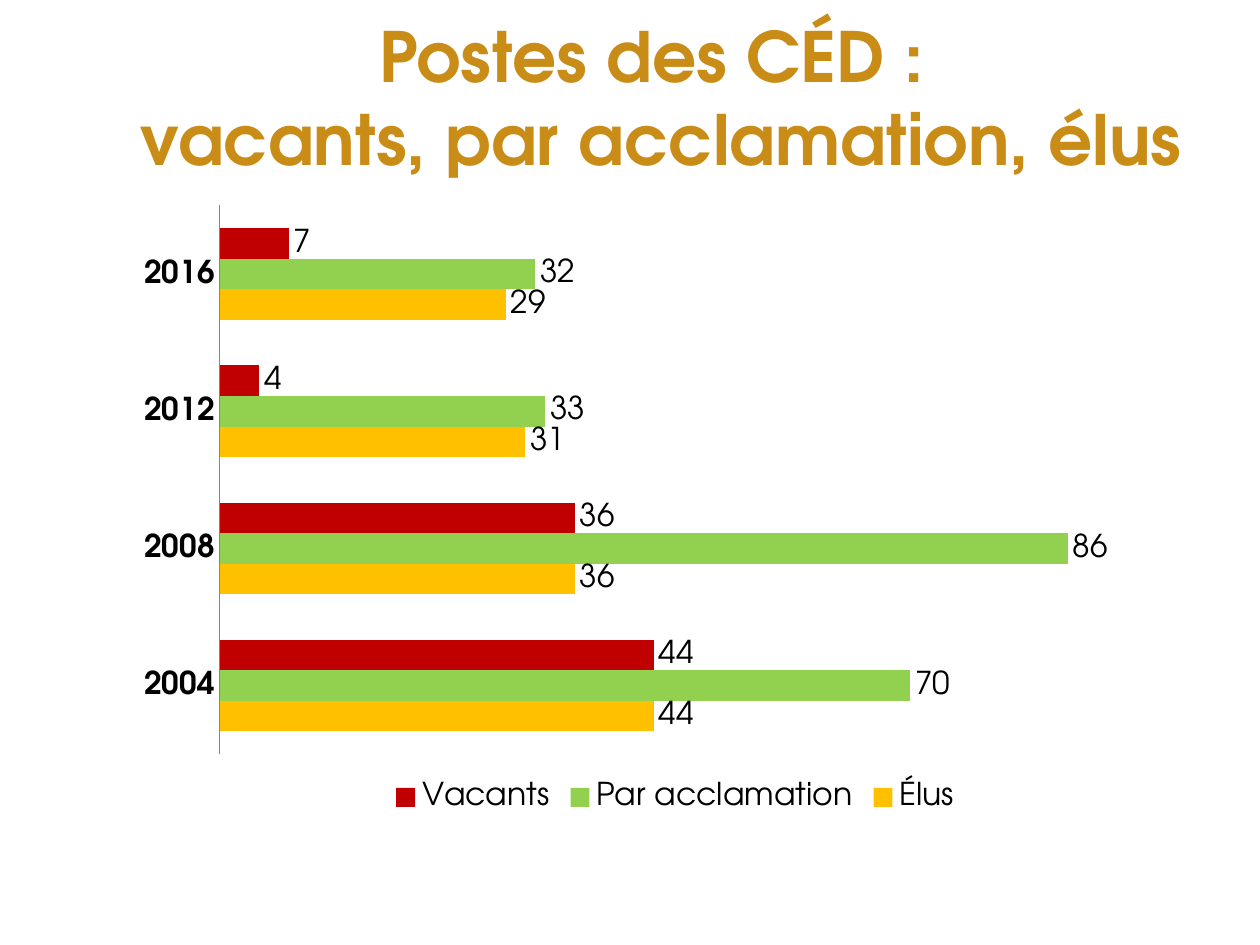
from pptx import Presentation
from pptx.chart.data import CategoryChartData as Data
from pptx.dml.color import RGBColor as Rgb
from pptx.enum.chart import XL_CHART_TYPE as Kind, XL_LABEL_POSITION as Spot
from pptx.enum.chart import XL_LEGEND_POSITION as Side, XL_TICK_MARK as Tick
from pptx.enum.text import MSO_ANCHOR as Anchor, PP_ALIGN as Align
from pptx.util import Cm, Pt

TITLE = "Postes des CÉD : \vvacants, par acclamation, élus"
YEARS = ["2004", "2008", "2012", "2016"]
SERIES = [
    ("Élus", (44, 36, 31, 29), "FFC000"),
    ("Par acclamation", (70, 86, 33, 32), "92D050"),
    ("Vacants", (44, 36, 4, 7), "C00000"),
]
THEME = {
    "face": "TeX Gyre Adventor",
    "title": {"size": Pt(39.6), "bold": True, "color": "C98C16"},
    "chart": {"size": Pt(18), "bold": False, "color": "000000"},
    "years": {"size": Pt(18), "bold": True, "color": "000000"},
    "axis": "868686",
}
SIZE = Cm(25.4), Cm(19.05)
HEAD = Cm(1.9), Cm(0.36), Cm(22.86), Cm(3.18)
PLOT = Cm(2.46), Cm(3.89), Cm(22.3), Cm(12.62)


def put(item, attrs):
    for name, value in attrs.items():
        setattr(item, name, value)


def style(font, role):
    look = dict(THEME[role])
    font.color.rgb = Rgb.from_string(look.pop("color"))
    put(font, {"name": THEME["face"], **look})


def add_title(slide):
    frame = slide.shapes.add_textbox(*HEAD).text_frame
    put(frame, {"word_wrap": True, "vertical_anchor": Anchor.MIDDLE, "text": TITLE})
    para = frame.paragraphs[0]
    para.alignment = Align.CENTER
    for run in para.runs:
        style(run.font, "title")


def add_bars(slide):
    data = Data()
    data.categories = YEARS
    for name, values, _ in SERIES:
        data.add_series(name, values)
    chart = slide.shapes.add_chart(Kind.BAR_CLUSTERED, *PLOT, data).chart
    put(chart, {"has_title": False, "has_legend": True})
    style(chart.font, "chart")
    put(chart.legend, {"position": Side.BOTTOM, "include_in_layout": False})
    style(chart.legend.font, "chart")

    years = chart.category_axis
    put(years, {"major_tick_mark": Tick.NONE, "minor_tick_mark": Tick.NONE})
    style(years.tick_labels.font, "years")
    years.format.line.color.rgb = Rgb.from_string(THEME["axis"])
    put(chart.value_axis, {
        "visible": False, "has_major_gridlines": False,
        "minimum_scale": 0, "maximum_scale": 100,
    })

    plot = chart.plots[0]
    put(plot, {"gap_width": 150, "overlap": 0, "vary_by_categories": False})
    for bars, (_, _, color) in zip(plot.series, SERIES):
        bars.format.fill.solid()
        bars.format.fill.fore_color.rgb = Rgb.from_string(color)
        labels = bars.data_labels
        put(labels, {"show_value": True, "position": Spot.OUTSIDE_END})
        style(labels.font, "chart")


def main():
    """Build the slide of vacant, acclaimed and elected posts."""
    deck = Presentation()
    put(deck, dict(zip(("slide_width", "slide_height"), SIZE)))
    slide = deck.slides.add_slide(deck.slide_layouts[6])
    add_title(slide)
    add_bars(slide)
    deck.save("out.pptx")


if __name__ == "__main__":
    main()
